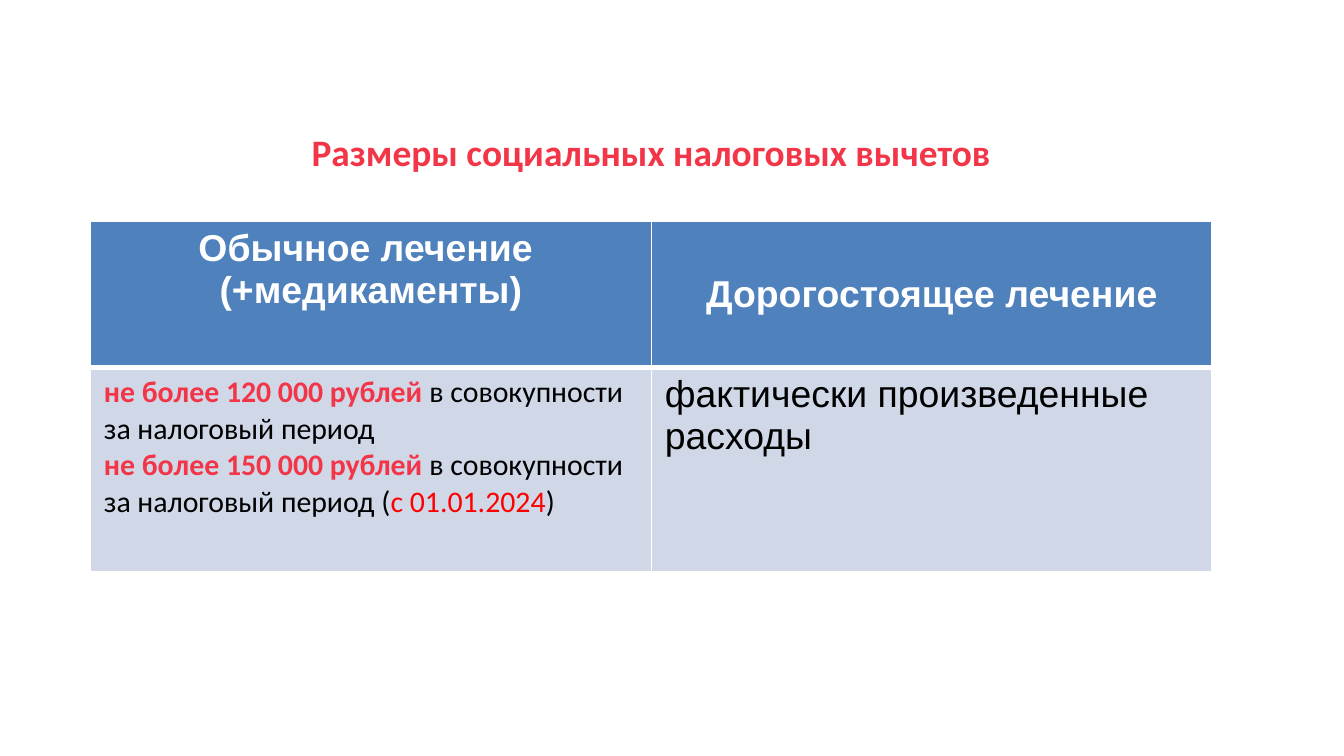
from dataclasses import dataclass

from pptx import Presentation
from pptx import util as u
from pptx.dml import color
from pptx.enum import text
from pptx.oxml import ns
from lxml import etree


@dataclass(frozen=True)
class Theme:
    accent: str = "F23648"
    alert: str = "FF0000"
    ink: str = "000000"
    white: str = "FFFFFF"
    header_fill: str = "4F81BD"
    body_fill: str = "D0D8E8"
    large: int = 20
    small: int = 16
    thin: int = 1
    thick: int = 3


THEME = Theme()

# Character formats: font attributes plus the colour
TITLE = dict(name="Calibri", size=u.Pt(THEME.large), bold=True, color=THEME.accent)
HEADER = dict(name="Arial", size=u.Pt(THEME.large), bold=True, color=THEME.white)
PLAIN = dict(name="Arial", size=u.Pt(THEME.large), bold=False, color=THEME.ink)
DETAIL = dict(name="Calibri", size=u.Pt(THEME.small), bold=False, color=THEME.ink)
LIMIT = {**DETAIL, "bold": True, "color": THEME.accent}
DATE = {**DETAIL, "color": THEME.alert}

CENTER = text.PP_ALIGN.CENTER
LEFT = text.PP_ALIGN.LEFT
TOP = text.MSO_ANCHOR.TOP
MIDDLE = text.MSO_ANCHOR.MIDDLE

# Each cell: alignment, anchor, paragraphs made of (wording, format) runs
ROWS = [
    [
        (CENTER, TOP, [[("Обычное лечение ", HEADER)], [("(+медикаменты)", HEADER)]]),
        (CENTER, MIDDLE, [[("Дорогостоящее лечение", HEADER)]]),
    ],
    [
        (LEFT, TOP, [
            [("не более 120 000 рублей ", LIMIT), ("в совокупности", DETAIL)],
            [("за налоговый период", DETAIL)],
            [("не более 150 000 рублей ", LIMIT), ("в совокупности", DETAIL)],
            [("за налоговый период (", DETAIL), ("с 01.01.2024", DATE), (")", DETAIL)],
        ]),
        (LEFT, TOP, [[("фактически произведенные расходы", PLAIN)]]),
    ],
]


def write_paragraphs(frame, paragraphs, alignment):
    for index, runs in enumerate(paragraphs):
        paragraph = frame.add_paragraph() if index else frame.paragraphs[0]
        paragraph.alignment = alignment
        for wording, style in runs:
            run = paragraph.add_run()
            run.text = wording
            for key, value in style.items():
                if key == "color":
                    run.font.color.rgb = color.RGBColor.from_string(value)
                else:
                    setattr(run.font, key, value)


def set_borders(cell, widths):
    properties = cell._tc.get_or_add_tcPr()
    for side, width in widths.items():
        line = etree.SubElement(properties, ns.qn(f"a:ln{side}"), w=str(u.Pt(width)))
        fill = etree.SubElement(line, ns.qn("a:solidFill"))
        etree.SubElement(fill, ns.qn("a:srgbClr"), val=THEME.white)


def place_title(slide, left, top, width, height):
    title = slide.shapes.title
    title.left, title.top, title.width, title.height = left, top, width, height
    title.text_frame.vertical_anchor = MIDDLE
    write_paragraphs(
        title.text_frame, [[("Размеры социальных налоговых вычетов", TITLE)]], CENTER)


def place_table(slide, left, top, width, row_heights):
    table = slide.shapes.add_table(
        len(ROWS), len(ROWS[0]), left, top, width, sum(row_heights)).table
    for row, height in zip(table.rows, row_heights):
        row.height = height
    for row_index, row in enumerate(ROWS):
        header = row_index == 0
        # The thick rule lies between the header and the body
        widths = dict(L=THEME.thin, R=THEME.thin,
                      T=THEME.thin if header else THEME.thick,
                      B=THEME.thick if header else THEME.thin)
        fill = THEME.header_fill if header else THEME.body_fill
        for column_index, (alignment, anchor, paragraphs) in enumerate(row):
            cell = table.cell(row_index, column_index)
            set_borders(cell, widths)
            cell.fill.solid()
            cell.fill.fore_color.rgb = color.RGBColor.from_string(fill)
            cell.vertical_anchor = anchor
            write_paragraphs(cell.text_frame, paragraphs, alignment)


def main():
    presentation = Presentation()
    presentation.slide_width, presentation.slide_height = u.Cm(25.4), u.Cm(14.28)
    slide = presentation.slides.add_slide(presentation.slide_layouts[5])

    left, width = u.Cm(1.71), u.Cm(21.2)
    place_title(slide, left, u.Cm(1.56), width, u.Cm(2.62))
    place_table(slide, left, u.Cm(4.18), width, [u.Cm(2.76), u.Cm(3.87)])
    presentation.save("out.pptx")


if __name__ == "__main__":
    main()
